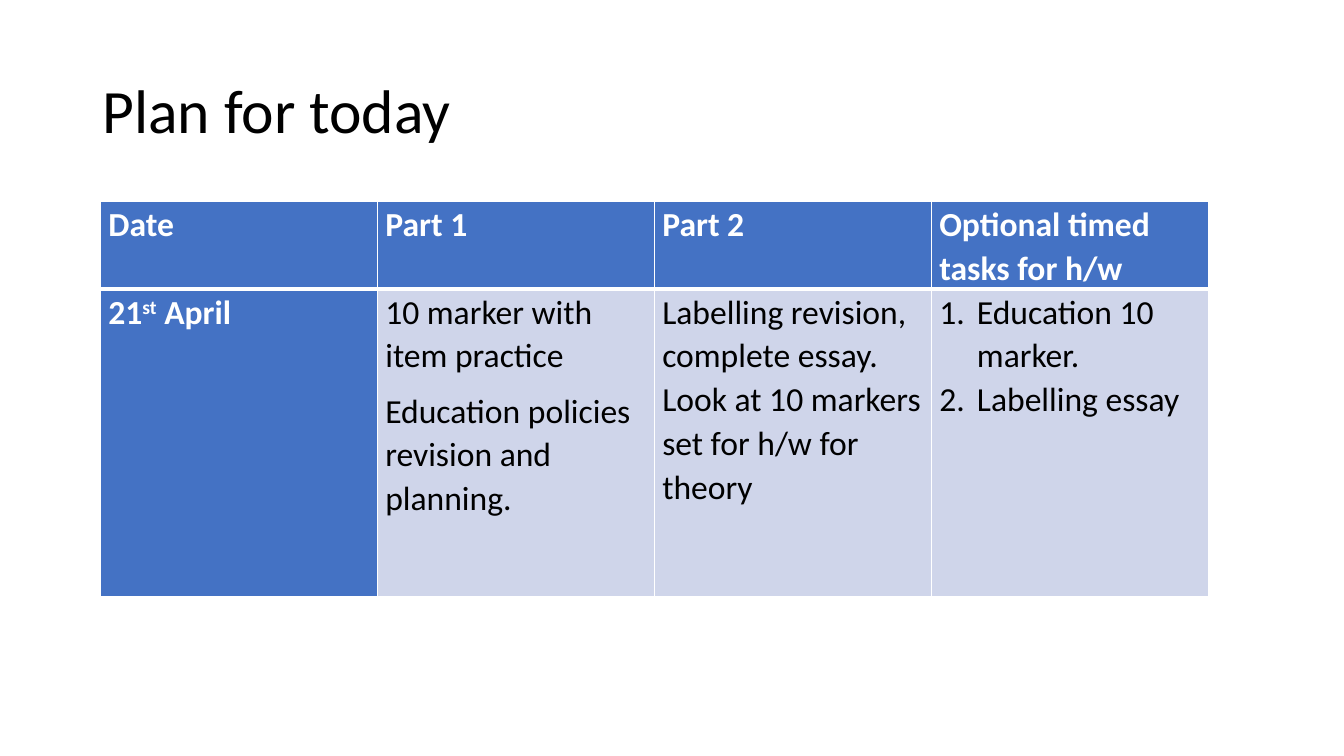
from lxml.etree import SubElement
from pptx import Presentation
from pptx.dml.color import RGBColor
from pptx.enum.text import MSO_ANCHOR, PP_ALIGN
from pptx.oxml.ns import qn
from pptx.util import Cm, Pt

WHITE, BLACK, BLUE, PALE = "FFFFFF", "000000", "4472C4", "CFD5EA"

HEADERS = ["Date", "Part 1", "Part 2", "Optional timed tasks for h/w"]
PLAN = [
    [[("21", 0), ("st", 30), (" April", 0)]],
    [[("10 marker with item practice", 0)],
     [("Education policies revision and planning.", 0)]],
    [[("Labelling revision, complete essay. Look at 10 markers set for h/w for theory", 0)]],
    [[("Education 10 marker.", 0)], [("Labelling essay", 0)]],
]


def colour(value):
    return RGBColor.from_string(value)


def apply(target, values):
    for name, value in values.items():
        setattr(target, name, value)


class SlideBuilder:
    font_name = "Calibri"

    def __init__(self, presentation):
        self.slide = presentation.slides.add_slide(presentation.slide_layouts[5])

    def style_run(self, run, size, text_colour, bold=False):
        apply(run.font, {"name": self.font_name, "size": Pt(size), "bold": bold})
        run.font.color.rgb = colour(text_colour)

    def title(self, text, left, top, width, height):
        shape = self.slide.shapes.title
        apply(shape, {"left": Cm(left), "top": Cm(top),
                      "width": Cm(width), "height": Cm(height)})
        apply(shape.text_frame, {"word_wrap": True,
                                 "vertical_anchor": MSO_ANCHOR.MIDDLE})
        paragraph = shape.text_frame.paragraphs[0]
        apply(paragraph, {"alignment": PP_ALIGN.LEFT, "line_spacing": 0.9})
        run = paragraph.add_run()
        run.text = text
        self.style_run(run, 44, BLACK)

    def table(self, left, top, column_width, row_heights, column_count):
        frame = self.slide.shapes.add_table(
            len(row_heights), column_count, Cm(left), Cm(top),
            Cm(column_width * column_count), Cm(sum(row_heights)))
        table = frame.table
        apply(table, {"first_col": True, "horz_banding": False})
        for column in table.columns:
            column.width = Cm(column_width)
        for row, height in zip(table.rows, row_heights):
            row.height = Cm(height)
        return table

    def borders(self, cell, widths):
        properties = cell._tc.get_or_add_tcPr()
        for side, width in widths.items():
            line = SubElement(properties, qn(f"a:ln{side}"), w=str(Pt(width)))
            fill = SubElement(line, qn("a:solidFill"))
            SubElement(fill, qn("a:srgbClr"), val=WHITE)

    def number(self, paragraph):
        properties = paragraph._p.get_or_add_pPr()
        apply_indent = {"marL": Cm(0.95), "indent": -Cm(0.95)}
        for name, value in apply_indent.items():
            properties.set(name, str(value))
        SubElement(properties, qn("a:buFont"), typeface="+mj-lt")
        SubElement(properties, qn("a:buAutoNum"), type="arabicPeriod")

    def cell(self, cell, paragraphs, fill, text_colour, bold, widths, numbered=False):
        apply(cell, {"margin_left": Cm(0.19), "margin_right": Cm(0.19),
                     "margin_top": 0, "margin_bottom": 0,
                     "vertical_anchor": MSO_ANCHOR.TOP})
        self.borders(cell, widths)
        cell.fill.solid()
        cell.fill.fore_color.rgb = colour(fill)
        for index, pieces in enumerate(paragraphs):
            frame = cell.text_frame
            paragraph = frame.add_paragraph() if index else frame.paragraphs[0]
            last = index == len(paragraphs) - 1
            apply(paragraph, {"line_spacing": 1.07,
                              "space_after": Pt(0 if numbered and not last else 8)})
            if numbered:
                self.number(paragraph)
            for text, baseline in pieces:
                run = paragraph.add_run()
                run.text = text
                self.style_run(run, 24, text_colour, bold)
                if baseline:
                    run._r.get_or_add_rPr().set("baseline", str(baseline * 1000))


def main():
    presentation = Presentation()
    apply(presentation, {"slide_width": Cm(33.87), "slide_height": Cm(19.05)})
    builder = SlideBuilder(presentation)
    builder.title("Plan for today", 2.33, 1.01, 29.21, 3.68)
    table = builder.table(2.54, 5.08, 6.98, [2.12, 7.74], len(HEADERS))
    for column, (header, plan) in enumerate(zip(HEADERS, PLAN)):
        builder.cell(table.cell(0, column), [[(header, 0)]], BLUE, WHITE, True,
                     {"L": 1, "R": 1, "T": 1, "B": 3})
        is_date = column == 0
        builder.cell(table.cell(1, column), plan, BLUE if is_date else PALE,
                     WHITE if is_date else BLACK, is_date,
                     {"L": 1, "R": 1, "T": 3, "B": 1},
                     numbered=column == len(HEADERS) - 1)
    presentation.save("out.pptx")


if __name__ == "__main__":
    main()
